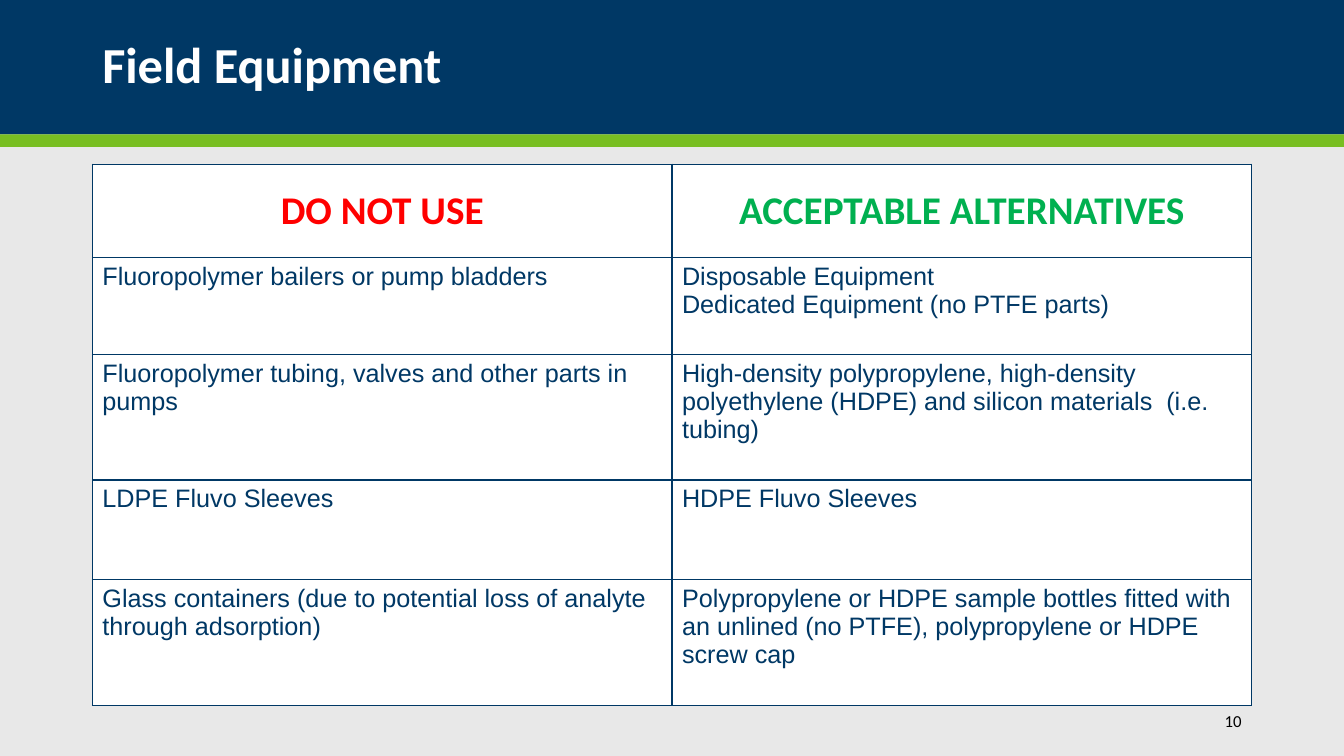
from dataclasses import dataclass

from lxml.etree import SubElement
from pptx import Presentation
from pptx.dml.color import RGBColor
from pptx.enum.shapes import MSO_SHAPE as Shape
from pptx.enum.text import MSO_ANCHOR as Anchor, PP_ALIGN as Align
from pptx.oxml.ns import qn
from pptx.slide import Slide
from pptx.table import _Cell as Cell
from pptx.text.text import TextFrame
from pptx.util import Pt

COLORS = {
    "navy": "003865",
    "green": "78BE21",
    "gray": "E8E8E8",
    "white": "FFFFFF",
    "black": "000000",
    "avoid": "FF0000",
    "accept": "00B050",
}


@dataclass(frozen=True)
class Frame:
    left: float
    top: float
    width: float
    height: float

    def points(self) -> tuple[Pt, Pt, Pt, Pt]:
        return Pt(self.left), Pt(self.top), Pt(self.width), Pt(self.height)


@dataclass(frozen=True)
class Style:
    size: float
    font: str
    color: str
    bold: bool = False
    align: Align = Align.LEFT
    spacing: float = 1.0


@dataclass(frozen=True)
class Band:
    frame: Frame
    color: str


@dataclass(frozen=True)
class Label:
    frame: Frame
    text: str
    style: Style


@dataclass(frozen=True)
class Row:
    height: float
    avoid: str
    accept: str


PAGE_WIDTH, PAGE_HEIGHT = 960, 540
MARGIN = 66
TABLE_WIDTH = PAGE_WIDTH - 2 * MARGIN
TABLE_TOP = 117.2

BANDS = [
    Band(Frame(0, 0, PAGE_WIDTH, 96), "navy"),
    Band(Frame(0, 96, PAGE_WIDTH, 9), "green"),
]
LABELS = [
    Label(Frame(MARGIN, 12, TABLE_WIDTH, 72), "Field Equipment",
          Style(36, "Calibri", "white", bold=True, spacing=0.9)),
    Label(Frame(779, 500.5, 115, 29), "10",
          Style(12, "Calibri", "black", align=Align.RIGHT)),
]
HEADER_STYLES = [
    Style(28, "Calibri", color, bold=True, align=Align.CENTER)
    for color in ("avoid", "accept")
]
BODY_STYLE = Style(18, "Arial", "navy")
ROWS = [
    Row(66.7, "DO NOT USE", "ACCEPTABLE ALTERNATIVES"),
    Row(69.3, "Fluoropolymer bailers or pump bladders",
        "Disposable Equipment\nDedicated Equipment (no PTFE parts)"),
    Row(89.7, "Fluoropolymer tubing, valves and other parts in pumps",
        "High-density polypropylene, high-density polyethylene (HDPE) "
        "and silicon materials  (i.e. tubing)"),
    Row(71, "LDPE Fluvo Sleeves", "HDPE Fluvo Sleeves"),
    Row(90, "Glass containers (due to potential loss of analyte through adsorption)",
        "Polypropylene or HDPE sample bottles fitted with an unlined "
        "(no PTFE), polypropylene or HDPE screw cap"),
]


def rgb(name: str) -> RGBColor:
    return RGBColor.from_string(COLORS[name])


def write(text_frame: TextFrame, text: str, style: Style) -> None:
    text_frame.text = text
    for para in text_frame.paragraphs:
        para.alignment = style.align
        para.line_spacing = style.spacing
        para.font.size = Pt(style.size)
        para.font.name = style.font
        para.font.bold = style.bold
        para.font.color.rgb = rgb(style.color)


def draw_band(page: Slide, band: Band) -> None:
    box = page.shapes.add_shape(Shape.RECTANGLE, *band.frame.points())
    box.shadow.inherit = False
    box.fill.solid()
    box.fill.fore_color.rgb = rgb(band.color)
    box.line.fill.background()


def draw_label(page: Slide, label: Label) -> None:
    box = page.shapes.add_textbox(*label.frame.points())
    box.text_frame.word_wrap = True
    box.text_frame.vertical_anchor = Anchor.MIDDLE
    write(box.text_frame, label.text, label.style)


def add_borders(cell: Cell) -> None:
    properties = cell._tc.get_or_add_tcPr()
    # Borders must come before the fill in the cell properties
    for index, side in enumerate(("a:lnL", "a:lnR", "a:lnT", "a:lnB")):
        line = SubElement(properties, qn(side), w=str(Pt(1)))
        fill = SubElement(line, qn("a:solidFill"))
        SubElement(fill, qn("a:srgbClr"), val=COLORS["navy"])
        properties.insert(index, line)


def draw_table(page: Slide, rows: list[Row]) -> None:
    frame = Frame(MARGIN, TABLE_TOP, TABLE_WIDTH, sum(row.height for row in rows))
    table = page.shapes.add_table(len(rows), 2, *frame.points()).table
    for column in table.columns:
        column.width = Pt(TABLE_WIDTH / 2)
    for row_index, row in enumerate(rows):
        table.rows[row_index].height = Pt(row.height)
        for column_index, text in enumerate((row.avoid, row.accept)):
            is_header = row_index == 0
            cell = table.cell(row_index, column_index)
            cell.fill.solid()
            cell.fill.fore_color.rgb = rgb("white")
            cell.vertical_anchor = Anchor.MIDDLE if is_header else Anchor.TOP
            style = HEADER_STYLES[column_index] if is_header else BODY_STYLE
            write(cell.text_frame, text, style)
            add_borders(cell)


def main() -> None:
    deck = Presentation()
    deck.slide_width, deck.slide_height = Pt(PAGE_WIDTH), Pt(PAGE_HEIGHT)
    page = deck.slides.add_slide(deck.slide_layouts[6])
    page.background.fill.solid()
    page.background.fill.fore_color.rgb = rgb("gray")

    # Header bands
    for band in BANDS:
        draw_band(page, band)

    # Equipment comparison
    draw_table(page, ROWS)

    # Title and page number
    for label in LABELS:
        draw_label(page, label)

    deck.save("out.pptx")


if __name__ == "__main__":
    main()
